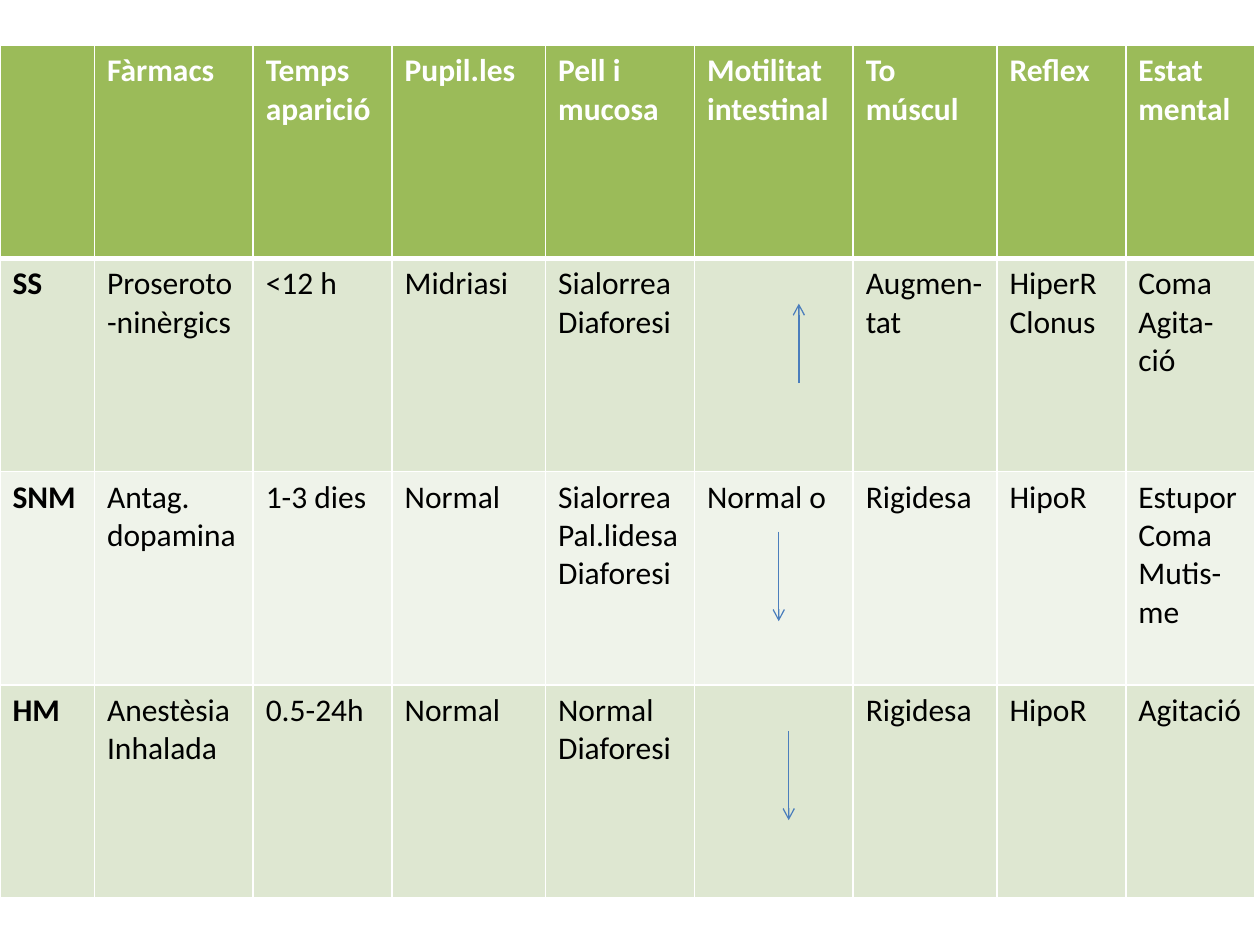
from lxml.etree import SubElement
from pptx import Presentation
from pptx.dml.color import RGBColor
from pptx.enum.shapes import MSO_CONNECTOR
from pptx.oxml.ns import qn
from pptx.util import Pt

WHITE = RGBColor(0xFF, 0xFF, 0xFF)
BLACK = RGBColor(0x00, 0x00, 0x00)
GREEN = RGBColor(0x9B, 0xBB, 0x59)
GREEN_BAND = RGBColor(0xDE, 0xE7, 0xD1)
PALE_BAND = RGBColor(0xEF, 0xF3, 0xEA)
BLUE = RGBColor(0x4B, 0x7E, 0xBC)

TABLE_TOP = 26
ROW_HEIGHT = 121.8
COLUMN_WIDTHS = [54, 90.7, 79.4, 87.7, 85.1, 90.7, 82.2, 73.6, 73.6]
SYNDROME_ROWS = [
    ["", "Fàrmacs", "Temps\naparició", "Pupil.les", "Pell i mucosa",
     "Motilitat\nintestinal", "To\nmúscul", "Reflex", "Estat\nmental"],
    ["SS", "Proseroto-ninèrgics", "<12 h", "Midriasi", "Sialorrea\nDiaforesi",
     "", "Augmen-tat", "HiperR\nClonus", "Coma\nAgita-\nció"],
    ["SNM", "Antag.\ndopamina", "1-3 dies", "Normal", "Sialorrea\nPal.lidesa\nDiaforesi",
     "Normal o", "Rigidesa", "HipoR", "Estupor\nComa\nMutis-me"],
    ["HM", "Anestèsia\nInhalada", "0.5-24h", "Normal", "Normal\nDiaforesi",
     "", "Rigidesa", "HipoR", "Agitació"],
]
# x, start y, end y of each motility arrow
MOTILITY_ARROWS = [(456.5, 218.9, 173.5), (445, 303.8, 355), (450.7, 417.6, 468.7)]


class SlideBuilder:
    font_name = "Calibri"
    font_size = Pt(18)

    def __init__(self, slide):
        self.slide = slide

    def table(self, rows, top, widths, row_height):
        frame = self.slide.shapes.add_table(
            len(rows), len(widths), Pt(0), Pt(top), Pt(sum(widths)), Pt(row_height * len(rows)))
        table = frame.table
        for column, width in zip(table.columns, widths):
            column.width = Pt(width)
        for row_index, texts in enumerate(rows):
            table.rows[row_index].height = Pt(row_height)
            for column_index, text in enumerate(texts):
                self.cell(table.cell(row_index, column_index), text, row_index, column_index)

    def cell(self, cell, text, row_index, column_index):
        is_header = row_index == 0
        self.borders(cell, top=3 if row_index == 1 else 1, bottom=3 if is_header else 1)
        cell.fill.solid()
        if is_header:
            cell.fill.fore_color.rgb = GREEN
        else:
            cell.fill.fore_color.rgb = GREEN_BAND if row_index % 2 else PALE_BAND
        cell.text_frame.text = text
        for para in cell.text_frame.paragraphs:
            para.font.size = self.font_size
            for span in para.runs:
                span.font.name = self.font_name
                span.font.size = self.font_size
                span.font.bold = is_header or column_index == 0
                span.font.color.rgb = WHITE if is_header else BLACK

    def borders(self, cell, top, bottom):
        """Draw white cell borders; must run before the fill, which follows them in the XML."""
        properties = cell._tc.get_or_add_tcPr()
        for side, width in (("L", 1), ("R", 1), ("T", top), ("B", bottom)):
            line = SubElement(properties, qn(f"a:ln{side}"), w=str(Pt(width)))
            fill = SubElement(line, qn("a:solidFill"))
            SubElement(fill, qn("a:srgbClr"), val=str(WHITE))

    def vertical_arrow(self, x, start, end):
        arrow = self.slide.shapes.add_connector(
            MSO_CONNECTOR.STRAIGHT, Pt(x), Pt(start), Pt(x), Pt(end))
        arrow.line.color.rgb = BLUE
        arrow.line.width = Pt(0.75)
        SubElement(arrow.line._get_or_add_ln(), qn("a:tailEnd"), type="arrow")
        SubElement(arrow._element.spPr, qn("a:effectLst"))


def main():
    deck = Presentation()
    deck.slide_width, deck.slide_height = Pt(720), Pt(540)
    builder = SlideBuilder(deck.slides.add_slide(deck.slide_layouts[6]))
    builder.table(SYNDROME_ROWS, TABLE_TOP, COLUMN_WIDTHS, ROW_HEIGHT)
    for x, start, end in MOTILITY_ARROWS:
        builder.vertical_arrow(x, start, end)
    deck.save("out.pptx")


if __name__ == "__main__":
    main()
